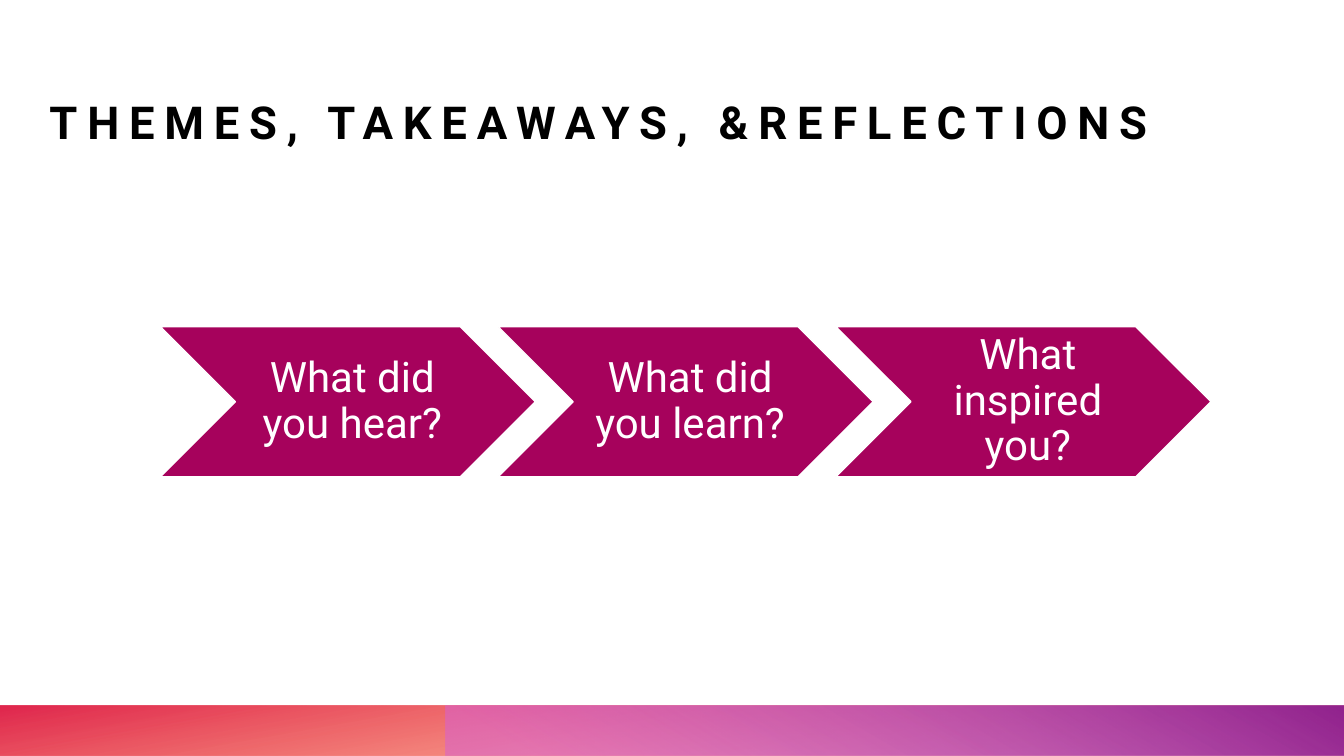
from lxml import etree
from pptx import Presentation
from pptx.dml.color import RGBColor
from pptx.enum.shapes import MSO_SHAPE
from pptx.enum.text import MSO_ANCHOR, PP_ALIGN
from pptx.oxml import parse_xml
from pptx.util import Inches, Pt

TITLE = "THEMES, TAKEAWAYS, &REFLECTIONS"
STEPS = ["What did you hear?", "What did you learn?", "What inspired you?"]
BARS = [
    (0, 180, 100, [(14, "FE4A00", 28), (100, "DA002F", 85)]),
    (4.42, 0, 240, [(9, "D861D4", 55), (99, "92248E", 100)]),
]

WHITE = RGBColor(0xFF, 0xFF, 0xFF)
BLACK = RGBColor(0, 0, 0)
PLUM = RGBColor(0xA6, 0x02, 0x5C)
FONT = "Roboto"
RECT, CHEVRON = MSO_SHAPE.RECTANGLE, MSO_SHAPE.CHEVRON
MIDDLE, BOTTOM = MSO_ANCHOR.MIDDLE, MSO_ANCHOR.BOTTOM
CENTER = PP_ALIGN.CENTER
NS = "http://schemas.openxmlformats.org/drawingml/2006/main"

WIDE, HIGH = 13.33, 7.5
BAR_TOP = 7
STEP_LEFT, STEP_TOP = 1.59, 3.24
STEP_WIDE, STEP_HIGH, PITCH = 3.72, 1.49, 3.35


def set_text(shape, text, size, color, anchor, pads):
    frame = shape.text_frame
    frame.word_wrap = True
    frame.vertical_anchor = anchor
    (frame.margin_left, frame.margin_top,
     frame.margin_right, frame.margin_bottom) = [Inches(p) for p in pads]
    para = frame.paragraphs[0]
    run = para.add_run()
    run.text = text
    run.font.name = FONT
    run.font.size = Pt(size)
    run.font.color.rgb = color
    return para, run


def fade(shape, angle, stops):
    grad = parse_xml(f'<a:gradFill xmlns:a="{NS}" rotWithShape="1"/>')
    group = etree.SubElement(grad, f"{{{NS}}}gsLst")
    for pos, color, alpha in stops:
        stop = etree.SubElement(group, f"{{{NS}}}gs", pos=str(pos * 1000))
        tint = etree.SubElement(stop, f"{{{NS}}}srgbClr", val=color)
        if alpha < 100:
            etree.SubElement(tint, f"{{{NS}}}alpha", val=str(alpha * 1000))
    etree.SubElement(grad, f"{{{NS}}}lin", ang=str(angle * 60000), scaled="0")
    shape._element.spPr.find(f"{{{NS}}}prstGeom").addnext(grad)


def add_bar(slide, left, turn, angle, stops):
    bar = slide.shapes.add_shape(RECT, Inches(left), Inches(BAR_TOP),
                                 Inches(WIDE - left), Inches(HIGH - BAR_TOP))
    bar.shadow.inherit = False
    bar.line.fill.background()
    bar.rotation = turn
    bar._element.spPr.find(f"{{{NS}}}xfrm").set("flipH", "1")
    fade(bar, angle, stops)


def add_title(slide):
    box = slide.shapes.add_textbox(Inches(0.49), Inches(0.34),
                                   Inches(12.11), Inches(1.13))
    para, run = set_text(box, TITLE, 32.4, BLACK, BOTTOM, (0, 0, 0, 0))
    run.font.bold = True
    run.font._element.set("spc", "700")


def add_step(slide, index, text):
    step = slide.shapes.add_shape(CHEVRON, Inches(STEP_LEFT + index * PITCH),
                                  Inches(STEP_TOP), Inches(STEP_WIDE),
                                  Inches(STEP_HIGH))
    step.shadow.inherit = False
    step.fill.solid()
    step.fill.fore_color.rgb = PLUM
    step.line.color.rgb = WHITE
    step.line.width = Pt(1)
    para, run = set_text(step, text, 30, WHITE, MIDDLE,
                         (0.13, 0.04, 0.04, 0.04))
    para.alignment = CENTER
    para.line_spacing = 0.9


def main():
    deck = Presentation()
    deck.slide_width, deck.slide_height = Inches(WIDE), Inches(HIGH)
    slide = deck.slides.add_slide(deck.slide_layouts[6])
    for bar in BARS:
        add_bar(slide, *bar)
    add_title(slide)
    for index, text in enumerate(STEPS):
        add_step(slide, index, text)
    deck.save("out.pptx")


if __name__ == "__main__":
    main()
